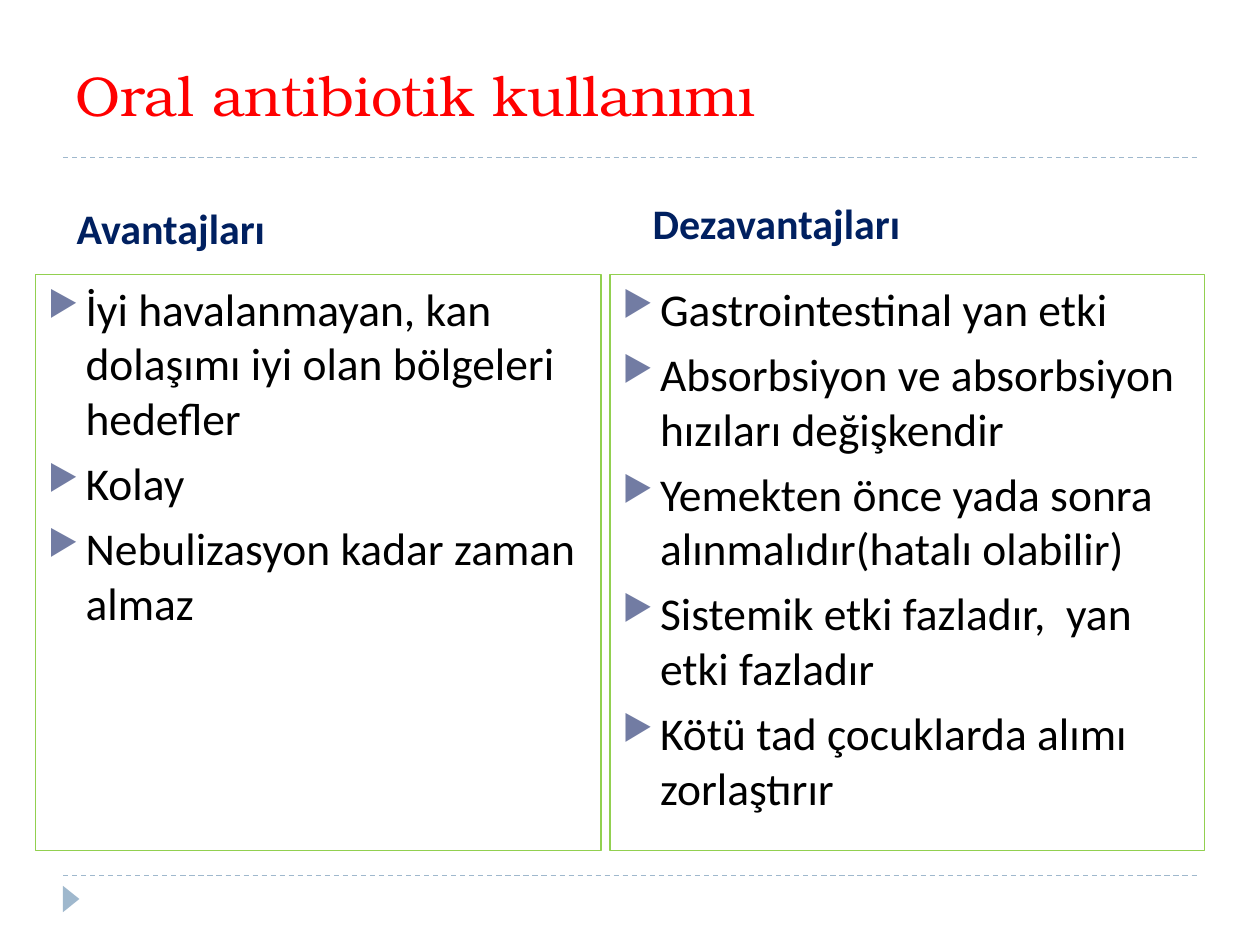
from lxml.etree import SubElement
from pptx import Presentation
from pptx.dml.color import RGBColor
from pptx.enum.dml import MSO_LINE
from pptx.enum.shapes import MSO_CONNECTOR, MSO_SHAPE
from pptx.enum.text import MSO_ANCHOR, PP_ALIGN
from pptx.oxml.ns import qn
from pptx.util import Pt

COLORS = {
    "title": "FF0000",
    "heading": "002060",
    "body": "000000",
    "border": "92D050",
    "bullet": "727CA3",
    "accent": "9FB8CD",
}
TITLE_FONT = {"name": "TeX Gyre Bonum", "size": Pt(32), "bold": False}
HEADING_FONT = {"name": "Calibri", "size": Pt(24), "bold": True}
BODY_FONT = {"name": "Calibri", "size": Pt(26), "bold": False}
FRAME_FORMAT = {
    "word_wrap": True,
    "margin_left": Pt(7.2),
    "margin_right": Pt(7.2),
    "margin_top": Pt(3.6),
    "margin_bottom": Pt(3.6),
}
INDENT = Pt(21.6)
PANEL_TOP, PANEL_HEIGHT = 157, 329
RULE_LEFT, RULE_RIGHT = 36, 684

COLUMNS = [
    {
        "heading": "Avantajları",
        "heading_box": (36.7, 94.3, 318.2, 54),
        "panel_span": (20.2, 323.3),
        "items": [
            "İyi havalanmayan, kan dolaşımı iyi olan bölgeleri hedefler",
            "Kolay",
            "Nebulizasyon kadar zaman almaz",
        ],
    },
    {
        "heading": "Dezavantajları",
        "heading_box": (365.8, 102.2, 318.2, 43.2),
        "panel_span": (348.5, 339.8),
        "items": [
            "Gastrointestinal yan etki",
            "Absorbsiyon ve absorbsiyon hızıları değişkendir",
            "Yemekten önce yada sonra alınmalıdır(hatalı olabilir)",
            "Sistemik etki fazladır,  yan etki fazladır",
            "Kötü tad çocuklarda alımı zorlaştırır",
        ],
    },
]


def color(name):
    return RGBColor.from_string(COLORS[name])


def points(box):
    return [Pt(length) for length in box]


def apply_format(target, values):
    for name, value in values.items():
        setattr(target, name, value)


def add_bullet(paragraph):
    properties = paragraph._p.get_or_add_pPr()
    properties.set("marL", str(INDENT))
    properties.set("indent", str(-INDENT))
    bullet_color = SubElement(properties, qn("a:buClr"))
    SubElement(bullet_color, qn("a:srgbClr"), val=COLORS["bullet"])
    SubElement(properties, qn("a:buSzPct"), val="76000")
    SubElement(properties, qn("a:buChar"), char="▶")


def write_text(shape, lines, font, color_name, anchor, bullets=False, space=6):
    frame = shape.text_frame
    apply_format(frame, {**FRAME_FORMAT, "vertical_anchor": anchor})
    frame.text = "\n".join(lines)
    for paragraph in frame.paragraphs:
        apply_format(paragraph, {"alignment": PP_ALIGN.LEFT, "space_before": Pt(space)})
        if bullets:
            add_bullet(paragraph)
        run_font = paragraph.runs[0].font
        apply_format(run_font, font)
        run_font.color.rgb = color(color_name)


def add_rule(slide, y):
    rule = slide.shapes.add_connector(
        MSO_CONNECTOR.STRAIGHT, *points((RULE_LEFT, y, RULE_RIGHT, y))
    )
    apply_format(rule.line, {"width": Pt(0.75), "dash_style": MSO_LINE.DASH})
    rule.line.color.rgb = color("accent")
    SubElement(rule._element.spPr, qn("a:effectLst"))


def add_marker(slide):
    marker = slide.shapes.add_shape(
        MSO_SHAPE.ISOSCELES_TRIANGLE, *points((33.1, 509, 15.1, 9.4))
    )
    marker.rotation = 90
    marker.shadow.inherit = False
    marker.fill.solid()
    marker.fill.fore_color.rgb = color("accent")
    marker.line.fill.background()


def add_label(slide, box, text, font, color_name, anchor, space):
    label = slide.shapes.add_textbox(*points(box))
    write_text(label, [text], font, color_name, anchor, space=space)


def add_panel(slide, span, items):
    left, width = span
    panel = slide.shapes.add_shape(
        MSO_SHAPE.RECTANGLE, *points((left, PANEL_TOP, width, PANEL_HEIGHT))
    )
    panel.shadow.inherit = False
    panel.fill.background()
    panel.line.width = Pt(0.75)
    panel.line.color.rgb = color("border")
    write_text(panel, items, BODY_FONT, "body", MSO_ANCHOR.TOP, bullets=True)


def main():
    presentation = Presentation()
    apply_format(presentation, {"slide_width": Pt(720), "slide_height": Pt(540)})
    slide = presentation.slides.add_slide(presentation.slide_layouts[6])
    for y in (500.4, 90):
        add_rule(slide, y)
    add_marker(slide)
    add_label(slide, (36, 18, 648, 72), "Oral antibiotik kullanımı",
              TITLE_FONT, "title", MSO_ANCHOR.MIDDLE, 0)
    for column in COLUMNS:
        add_label(slide, column["heading_box"], column["heading"],
                  HEADING_FONT, "heading", MSO_ANCHOR.BOTTOM, 6)
        add_panel(slide, column["panel_span"], column["items"])
    presentation.save("out.pptx")


if __name__ == "__main__":
    main()
